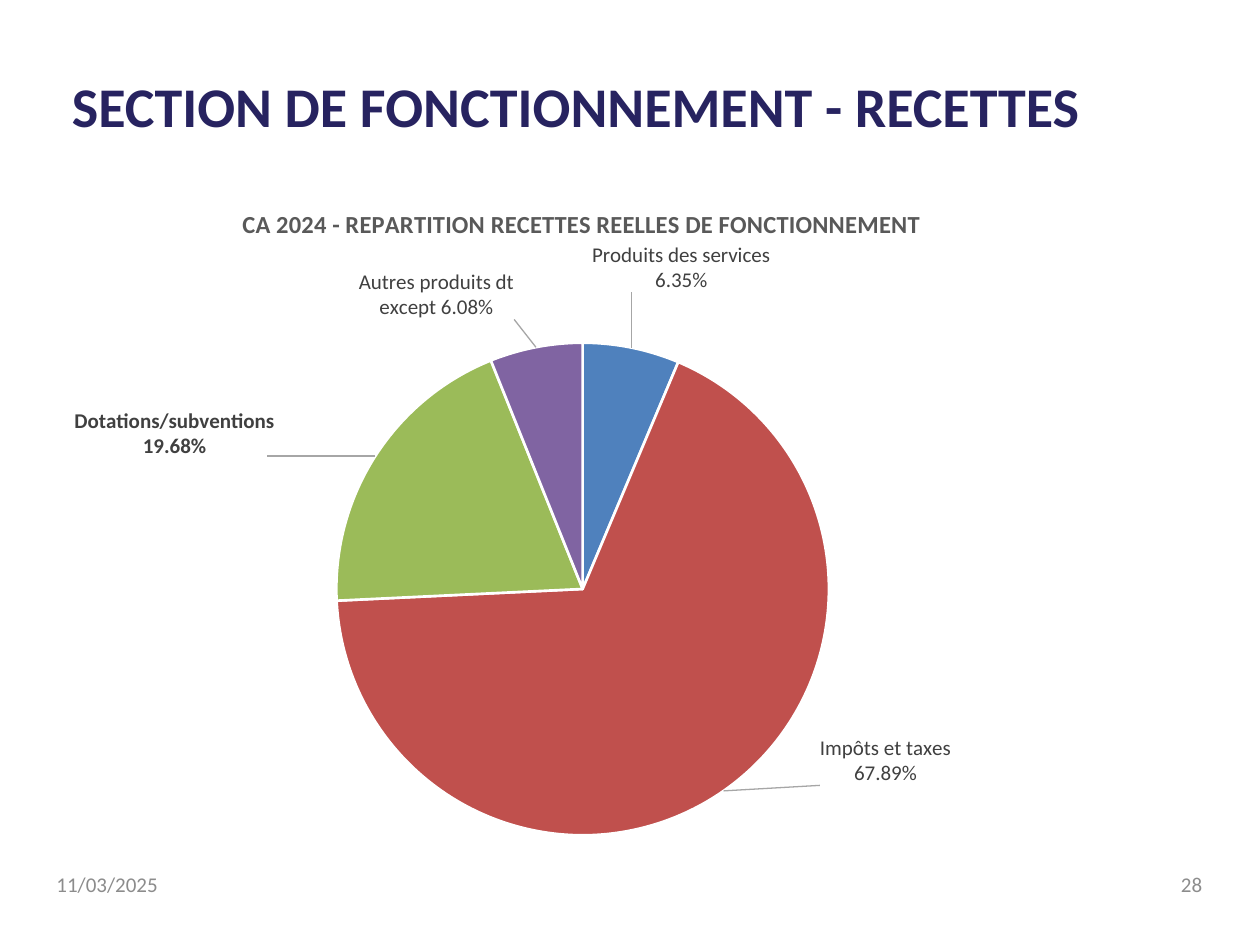
"""Build the operating revenue slide with its pie chart."""
from dataclasses import dataclass

import lxml.etree
import pptx
import pptx.chart.data
import pptx.dml.color
import pptx.enum.chart
import pptx.enum.text
import pptx.oxml
import pptx.oxml.ns
import pptx.util

Inches = pptx.util.Inches
Align = pptx.enum.text.PP_ALIGN
FONT = "Calibri"


@dataclass(frozen=True)
class Revenue:
    category: str
    share: float
    color: str
    label: tuple[str, ...]
    shift: tuple[float, float]
    bold: bool = False


@dataclass(frozen=True)
class Footer:
    text: str
    left: float
    align: Align


REVENUES = [
    Revenue("Produits des services", 0.0635, "4F81BD",
            ("Produits des services", "6.35%"), (-0.04, -0.07)),
    Revenue("Impôts et taxes", 0.6789, "C0504D",
            ("Impôts et taxes", "67.89%"), (0.09, -0.09)),
    Revenue("Dotations/subventions", 0.1968, "9BBB59",
            ("Dotations/subventions", "19.68%"), (-0.1, 0.01), True),
    Revenue("Autres produits dt except", 0.0608, "8064A2",
            ("Autres produits dt except 6.08%",), (-0.02, -0.03)),
]
FOOTERS = [Footer("11/03/2025", 0.35, Align.LEFT), Footer("28", 7.31, Align.RIGHT)]


def rgb(color: str) -> pptx.dml.color.RGBColor:
    return pptx.dml.color.RGBColor.from_string(color)


def add_span(para, text: str, size: float, color: str, bold: bool = False) -> None:
    span = para.add_run()
    span.text = text
    span.font.name = FONT
    span.font.size = pptx.util.Pt(size)
    span.font.bold = bold
    span.font.color.rgb = rgb(color)


def make_layout(**values: object):
    namespace = pptx.oxml.ns.nsdecls("c")
    entries = "".join(f'<c:{name} val="{value}"/>' for name, value in values.items())
    return pptx.oxml.parse_xml(
        f"<c:layout {namespace}><c:manualLayout>{entries}</c:manualLayout></c:layout>")


def set_layout(parent, layout, position: int) -> None:
    for old in parent.findall(pptx.oxml.ns.qn("c:layout")):
        parent.remove(old)
    parent.insert(position, layout)


def add_title(page) -> None:
    box = page.shapes.title
    box.left, box.top = Inches(0.47), Inches(0.6)
    box.width, box.height = Inches(8.82), Inches(0.47)
    box.text_frame.vertical_anchor = pptx.enum.text.MSO_ANCHOR.MIDDLE
    para = box.text_frame.paragraphs[0]
    para.alignment = Align.LEFT
    add_span(para, "SECTION DE FONCTIONNEMENT - RECETTES", 32, "272360", True)


def add_footer(page, footer: Footer) -> None:
    box = page.shapes.add_textbox(
        Inches(footer.left), Inches(6.82), Inches(2.33), Inches(0.4))
    box.text_frame.word_wrap = True
    box.text_frame.vertical_anchor = pptx.enum.text.MSO_ANCHOR.MIDDLE
    para = box.text_frame.paragraphs[0]
    para.alignment = footer.align
    add_span(para, footer.text, 12, "8C8C8C")


def style_slice(point, revenue: Revenue) -> None:
    point.format.fill.solid()
    point.format.fill.fore_color.rgb = rgb(revenue.color)
    point.format.line.color.rgb = rgb("FFFFFF")
    point.format.line.width = pptx.util.Pt(1.5)
    frame = point.data_label.text_frame
    for index, line in enumerate(revenue.label):
        para = frame.paragraphs[0] if index == 0 else frame.add_paragraph()
        add_span(para, line, 12, "404040", revenue.bold)
    point.data_label.position = pptx.enum.chart.XL_LABEL_POSITION.BEST_FIT


def add_pie(page) -> None:
    data = pptx.chart.data.CategoryChartData(number_format="0.00%")
    data.categories = [revenue.category for revenue in REVENUES]
    data.add_series("Series 1", [revenue.share for revenue in REVENUES])
    chart = page.shapes.add_chart(
        pptx.enum.chart.XL_CHART_TYPE.PIE, Inches(0.59), Inches(1.39),
        Inches(8.11), Inches(5.43), data).chart
    chart.font.name = FONT
    chart.font.size = pptx.util.Pt(10)
    chart.font.color.rgb = rgb("000000")
    chart.has_legend = False
    chart.has_title = True
    chart.chart_title.include_in_layout = False
    add_span(chart.chart_title.text_frame.paragraphs[0],
             "CA 2024 - REPARTITION RECETTES REELLES DE FONCTIONNEMENT",
             14, "595959", True)
    title = chart.chart_title._element
    set_layout(title, make_layout(xMode="edge", yMode="edge", x=0.16, y=0.04), 1)

    plot = chart.plots[0]
    plot.vary_by_categories = True
    plot_area = plot._element.getparent()
    set_layout(plot_area, make_layout(
        layoutTarget="inner", xMode="edge", yMode="edge",
        x=0.08, y=0.245, w=0.835, h=0.72), 0)

    series = plot.series[0]
    labels = series.data_labels
    labels.show_value = True
    labels.show_category_name = True
    labels.number_format = "0.00%"
    labels.number_format_is_linked = False
    labels.position = pptx.enum.chart.XL_LABEL_POSITION.BEST_FIT
    labels.font.name = FONT
    labels.font.size = pptx.util.Pt(12)
    labels.font.bold = True
    labels.font.color.rgb = rgb("404040")
    for index, revenue in enumerate(REVENUES):
        style_slice(series.points[index], revenue)
    label_nodes = labels._element.findall(pptx.oxml.ns.qn("c:dLbl"))
    for node, revenue in zip(label_nodes, REVENUES):
        across, down = revenue.shift
        set_layout(node, make_layout(x=across, y=down), 1)
    add_leader_lines(labels._element)


def add_leader_lines(labels) -> None:
    qn = pptx.oxml.ns.qn
    for old in labels.findall(qn("c:showLeaderLines")):
        labels.remove(old)
    lxml.etree.SubElement(labels, qn("c:showLeaderLines"), val="1")
    leader = lxml.etree.SubElement(labels, qn("c:leaderLines"))
    shape = lxml.etree.SubElement(leader, qn("c:spPr"))
    line = lxml.etree.SubElement(shape, qn("a:ln"), w="9525")
    fill = lxml.etree.SubElement(line, qn("a:solidFill"))
    lxml.etree.SubElement(fill, qn("a:srgbClr"), val="A6A6A6")


def main() -> None:
    deck = pptx.Presentation()
    deck.slide_width, deck.slide_height = Inches(10), Inches(7.5)
    page = deck.slides.add_slide(deck.slide_layouts[5])
    add_title(page)
    add_pie(page)
    for footer in FOOTERS:
        add_footer(page, footer)
    deck.save("out.pptx")


if __name__ == "__main__":
    main()
